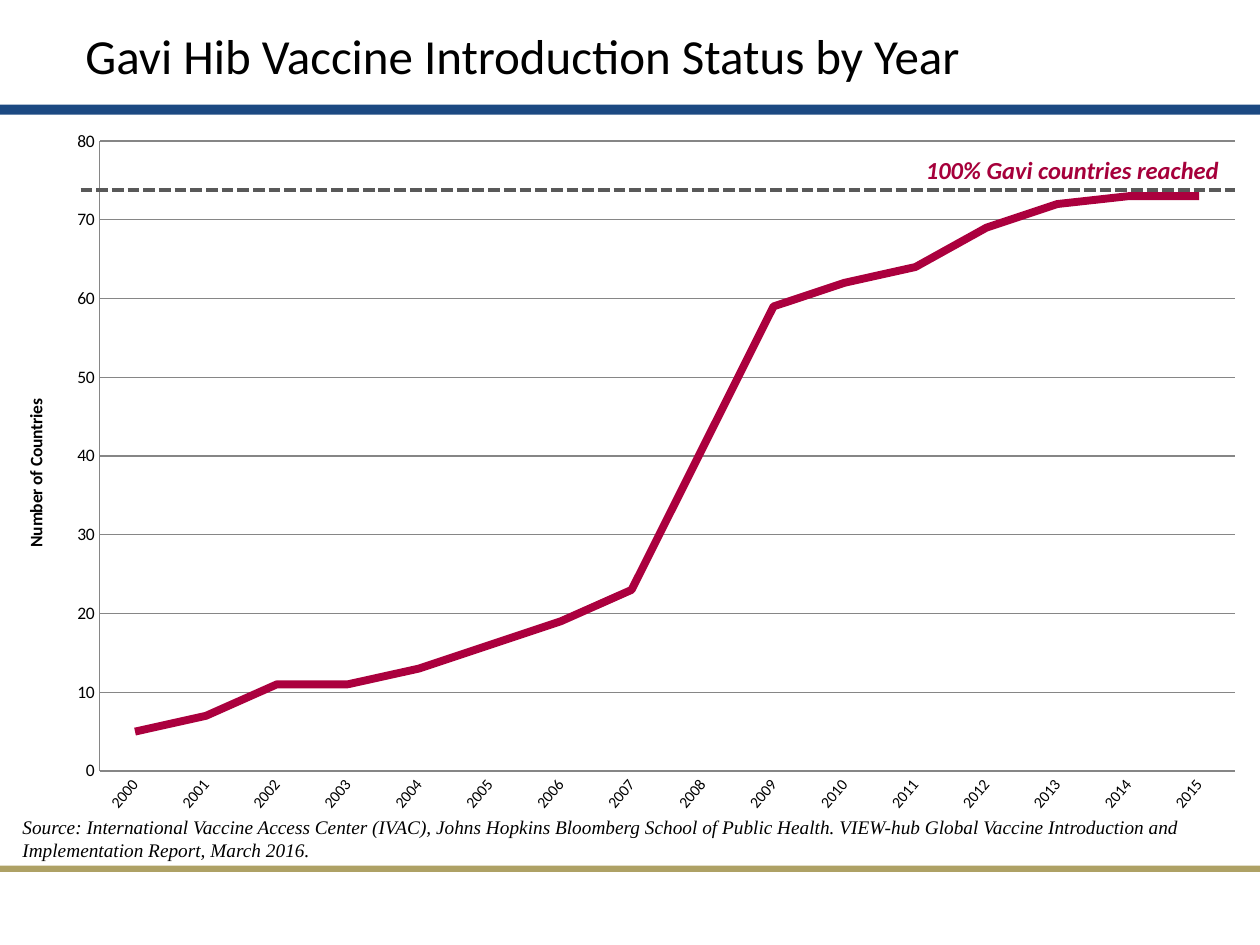
from dataclasses import dataclass

from lxml.etree import SubElement
from pptx import Presentation
from pptx.chart.data import CategoryChartData
from pptx.dml.color import RGBColor as RGB
from pptx.enum.chart import XL_CHART_TYPE as ChartType, XL_MARKER_STYLE as Marker, XL_TICK_MARK as Tick
from pptx.enum.dml import MSO_LINE as Dash
from pptx.enum.shapes import MSO_CONNECTOR as Connector, MSO_SHAPE as Shape
from pptx.oxml import parse_xml
from pptx.oxml.ns import nsdecls, qn
from pptx.util import Inches, Pt


@dataclass(frozen=True)
class Theme:
    black: RGB = RGB(0, 0, 0)
    blue: RGB = RGB(0x1C, 0x49, 0x82)
    gold: RGB = RGB(0x84, 0x70, 0x13)
    curve: RGB = RGB(0xAB, 0x00, 0x3E)
    label: RGB = RGB(0xA6, 0x00, 0x3B)
    target: RGB = RGB(0x59, 0x59, 0x59)
    grid: RGB = RGB(0x86, 0x86, 0x86)
    sans: str = "Calibri"
    serif: str = "Times New Roman"
    title_size: int = 28
    label_size: int = 14
    source_size: int = 11
    axis_size: int = 10
    year_size: int = 9


T = Theme()
YEARS = [str(year) for year in range(2000, 2016)]
COUNTRIES = [5, 7, 11, 11, 13, 16, 19, 23, 41, 59, 62, 64, 69, 72, 73, 73]


def set_font(font, size, color=T.black, name=T.sans, bold=False, italic=False):
    font.name, font.size = name, Pt(size)
    font.bold, font.italic = bold, italic
    font.color.rgb = color


def add_text(s, box, text, size, **style):
    tf = s.shapes.add_textbox(*map(Inches, box)).text_frame
    tf.word_wrap = True
    r = tf.paragraphs[0].add_run()
    r.text = text
    set_font(r.font, size, **style)


def add_bar(s, box, color, opacity=100):
    sp = s.shapes.add_shape(Shape.RECTANGLE, *map(Inches, box))
    sp.shadow.inherit = False
    sp.fill.solid()
    sp.fill.fore_color.rgb = color
    sp.line.fill.background()
    if opacity < 100:
        clr = sp.fill._xPr.find(".//" + qn("a:srgbClr"))
        SubElement(clr, qn("a:alpha"), val=str(opacity * 1000))


def set_layout(parent, index, chart_box, part, inner=False):
    """Place a chart part, given in inches from the chart's corner."""
    for old in parent.findall(qn("c:layout")):
        parent.remove(old)
    target = '<c:layoutTarget val="inner"/>' if inner else ""
    modes = '<c:xMode val="edge"/><c:yMode val="edge"/>'
    values = "".join(f'<c:{key} val="{length / whole}"/>'
                     for key, length, whole in zip("xywh", part, chart_box[2:] * 2))
    parent.insert(index, parse_xml(f'<c:layout {nsdecls("c")}><c:manualLayout>{target}{modes}'
                                   f"{values}</c:manualLayout></c:layout>"))


def add_line_chart(s, box):
    data = CategoryChartData()
    data.categories = YEARS
    data.add_series("Series 1", COUNTRIES)
    chart = s.shapes.add_chart(ChartType.LINE, *map(Inches, box), data).chart
    chart.has_legend = chart.has_title = False
    set_font(chart.font, T.axis_size)

    # Curve
    plot = chart.plots[0]
    plot.vary_by_categories = False
    series = plot.series[0]
    series.smooth = False
    series.marker.style = Marker.NONE
    series.format.line.color.rgb = T.curve
    series.format.line.width = Pt(4.5)

    # Axes
    years, values = chart.category_axis, chart.value_axis
    for axis, size in ((years, T.year_size), (values, T.axis_size)):
        axis.major_tick_mark = axis.minor_tick_mark = Tick.NONE
        axis.format.line.color.rgb = T.grid
        set_font(axis.tick_labels.font, size)
    years._element.find(f"{qn('c:txPr')}/{qn('a:bodyPr')}").set("rot", str(-50 * 60000))
    values.minimum_scale, values.maximum_scale, values.major_unit = 0, 80, 10
    values.has_major_gridlines = True
    values.major_gridlines.format.line.color.rgb = T.grid

    # Axis title
    title = values.axis_title
    tf = title.text_frame
    r = tf.paragraphs[0].add_run()
    r.text = "Number of Countries"
    set_font(r.font, T.axis_size, bold=True)
    tf._txBody.find(qn("a:bodyPr")).set("rot", str(-90 * 60000))
    set_layout(title._element, 1, box, (0.17, 2.2))

    # Plot area
    area = chart._chartSpace.chart.plotArea
    set_layout(area, 0, box, (0.79, 0.18, 9.01, 5), inner=True)


def add_target(s, box):
    """Dashed target line along the bottom of the box, with its label above."""
    x, y, w, h = box
    line = s.shapes.add_connector(Connector.STRAIGHT, *map(Inches, (x, y + h, x + w, y + h)))
    line.line.color.rgb = T.target
    line.line.width = Pt(2.25)
    line.line.dash_style = Dash.SQUARE_DOT
    SubElement(line._element.spPr, qn("a:effectLst"))
    label_w = 2.57
    add_text(s, (x + w - label_w + 0.02, y, label_w, h), "100% Gavi countries reached",
             T.label_size, color=T.label, bold=True, italic=True)


def main():
    prs = Presentation()
    prs.slide_width, prs.slide_height = Inches(10), Inches(7.5)
    s = prs.slides.add_slide(prs.slide_layouts[6])

    # Header and footer bars
    add_bar(s, (0, 0.83, 10, 0.08), T.blue)
    add_bar(s, (0, 6.87, 10, 0.05), T.gold, opacity=65)

    # Title and source
    add_text(s, (0.58, 0.15, 8.25, 0.92), "Gavi Hib Vaccine Introduction Status by Year", T.title_size)
    add_text(s, (0.08, 6.42, 9.74, 0.47),
             "Source: International Vaccine Access Center (IVAC), Johns Hopkins Bloomberg School of "
             "Public Health. VIEW-hub Global Vaccine Introduction and Implementation Report, March 2016.",
             T.source_size, name=T.serif, italic=True)

    # Chart with target
    add_line_chart(s, (0, 0.94, 10, 5.63))
    add_target(s, (0.64, 1.18, 9.16, 0.33))

    prs.save("out.pptx")


if __name__ == "__main__":
    main()
